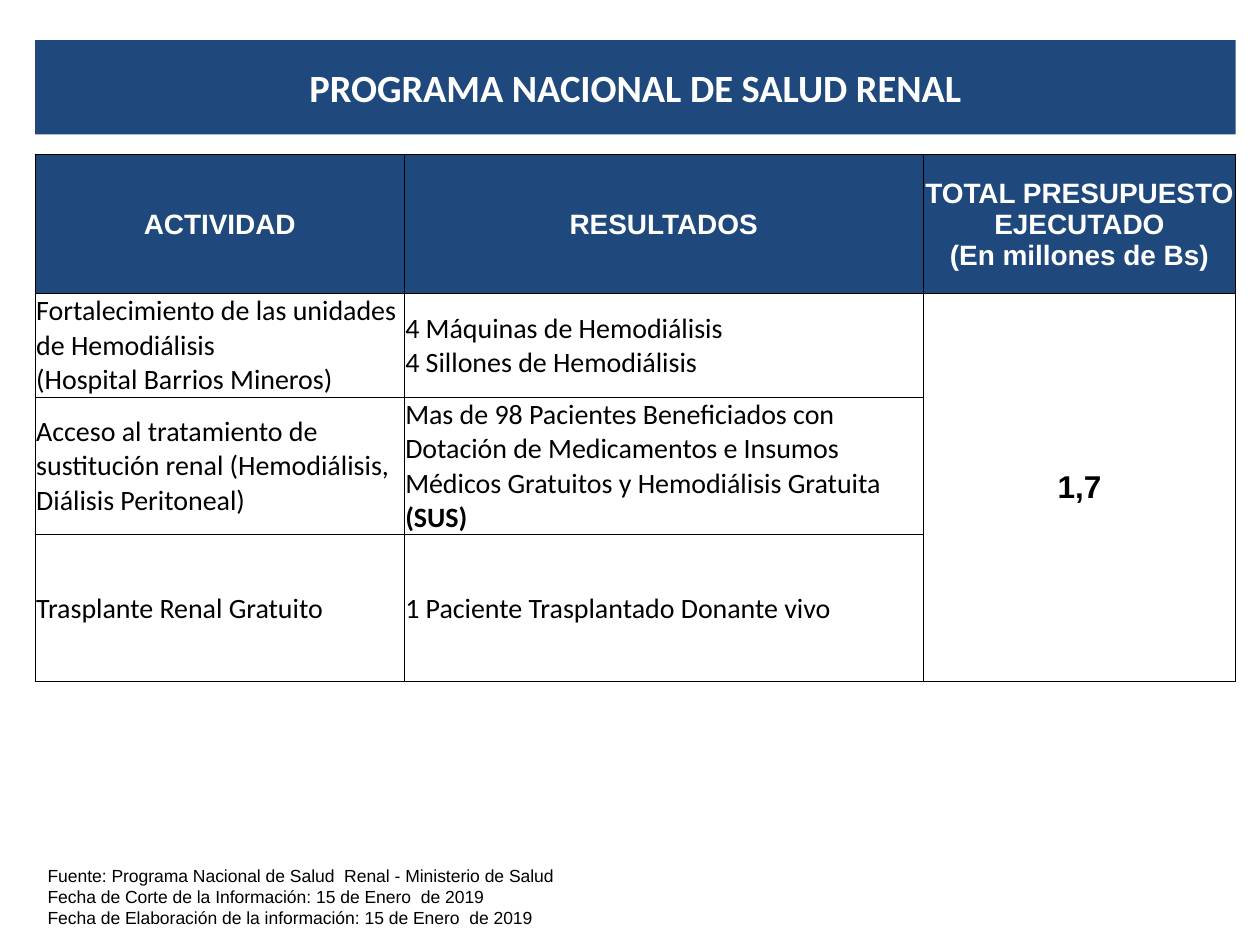
from lxml.etree import SubElement
from pptx import Presentation
from pptx.dml.color import RGBColor
from pptx.enum.text import MSO_ANCHOR as Anchor, PP_ALIGN as Align
from pptx.oxml.ns import qn
from pptx.util import Cm, Pt

NAVY, WHITE, BLACK = "1F497D", "FFFFFF", "000000"
LEFT, WIDTH = Cm(0.71), Cm(24.2)


def rgb(color):
    return RGBColor.from_string(color)


def write(tf, paragraphs, size, font, color=BLACK, bold=False, align=Align.LEFT):
    """Fill a text frame; a paragraph is a list of (text, bold) runs or a string."""
    for i, runs in enumerate(paragraphs):
        p = tf.add_paragraph() if i else tf.paragraphs[0]
        p.alignment = align
        for text, heavy in [(runs, bold)] if isinstance(runs, str) else runs:
            for j, line in enumerate(text.split("\n")):
                if j:
                    p.add_line_break()
                r = p.add_run()
                r.text = line
                r.font.size, r.font.name, r.font.bold = Pt(size), font, heavy
                r.font.color.rgb = rgb(color)


prs = Presentation()
prs.slide_width, prs.slide_height = Cm(25.4), Cm(19.05)
s = prs.slides.add_slide(prs.slide_layouts[5])

# Title band
title = s.shapes.title
title.left, title.top, title.width, title.height = LEFT, Cm(0.81), WIDTH, Cm(1.9)
title.fill.solid()
title.fill.fore_color.rgb = rgb(NAVY)
title.text_frame.vertical_anchor = Anchor.MIDDLE
write(title.text_frame, ["PROGRAMA NACIONAL DE SALUD RENAL"], 22, "Calibri",
      WHITE, True, Align.CENTER)

# Activities, results and budget
headers = [["ACTIVIDAD"], ["RESULTADOS"],
           ["TOTAL PRESUPUESTO EJECUTADO", "(En millones de Bs)"]]
activities = [
    (["Fortalecimiento de las unidades de Hemodiálisis", "(Hospital Barrios Mineros)"],
     ["4 Máquinas de Hemodiálisis\n4 Sillones de Hemodiálisis"], Align.LEFT),
    (["Acceso al tratamiento de sustitución renal (Hemodiálisis, Diálisis Peritoneal)"],
     [[("Mas de 98 Pacientes Beneficiados con Dotación de Medicamentos e Insumos "
        "Médicos Gratuitos y Hemodiálisis Gratuita ", False), ("(SUS)", True)]],
     Align.LEFT),
    (["Trasplante Renal Gratuito"], ["1 Paciente Trasplantado Donante vivo"],
     Align.JUSTIFY),
]
col_widths = [7.44, 10.46, 6.3]
row_heights = [2.79, 1.83, 2.24, 2.95]
table = s.shapes.add_table(len(row_heights), len(col_widths), LEFT, Cm(3.12),
                           WIDTH, Cm(sum(row_heights))).table
for column, width in zip(table.columns, col_widths):
    column.width = Cm(width)
for row, height in zip(table.rows, row_heights):
    row.height = Cm(height)
table.cell(1, 2).merge(table.cell(3, 2))

for i, row in enumerate(table.rows):
    for cell in row.cells:
        cell.vertical_anchor = Anchor.MIDDLE
        cell.margin_left = cell.margin_right = cell.margin_top = Cm(0.02)
        cell.margin_bottom = 0
        for side in ("a:lnL", "a:lnR", "a:lnT", "a:lnB"):
            ln = SubElement(cell._tc.get_or_add_tcPr(), qn(side), w=str(Pt(0.5)))
            SubElement(SubElement(ln, qn("a:solidFill")), qn("a:srgbClr"), val=BLACK)
        cell.fill.solid()
        cell.fill.fore_color.rgb = rgb(WHITE if i else NAVY)

for col, header in enumerate(headers):
    write(table.cell(0, col).text_frame, header, 16, "Arial", WHITE, True, Align.CENTER)
for i, (activity, result, align) in enumerate(activities, 1):
    for col, paragraphs in enumerate((activity, result)):
        write(table.cell(i, col).text_frame, paragraphs, 16, "Calibri", align=align)
write(table.cell(1, 2).text_frame, ["1,7"], 18, "Arial", bold=True, align=Align.CENTER)

# Source note
note = s.shapes.add_textbox(LEFT, Cm(17.32), WIDTH, Cm(1.55))
note.text_frame.word_wrap = True
write(note.text_frame, [
    "Fuente: Programa Nacional de Salud  Renal - Ministerio de Salud",
    "Fecha de Corte de la Información: 15 de Enero  de 2019",
    "Fecha de Elaboración de la información: 15 de Enero  de 2019",
], 10, "Arial")

prs.save("out.pptx")
